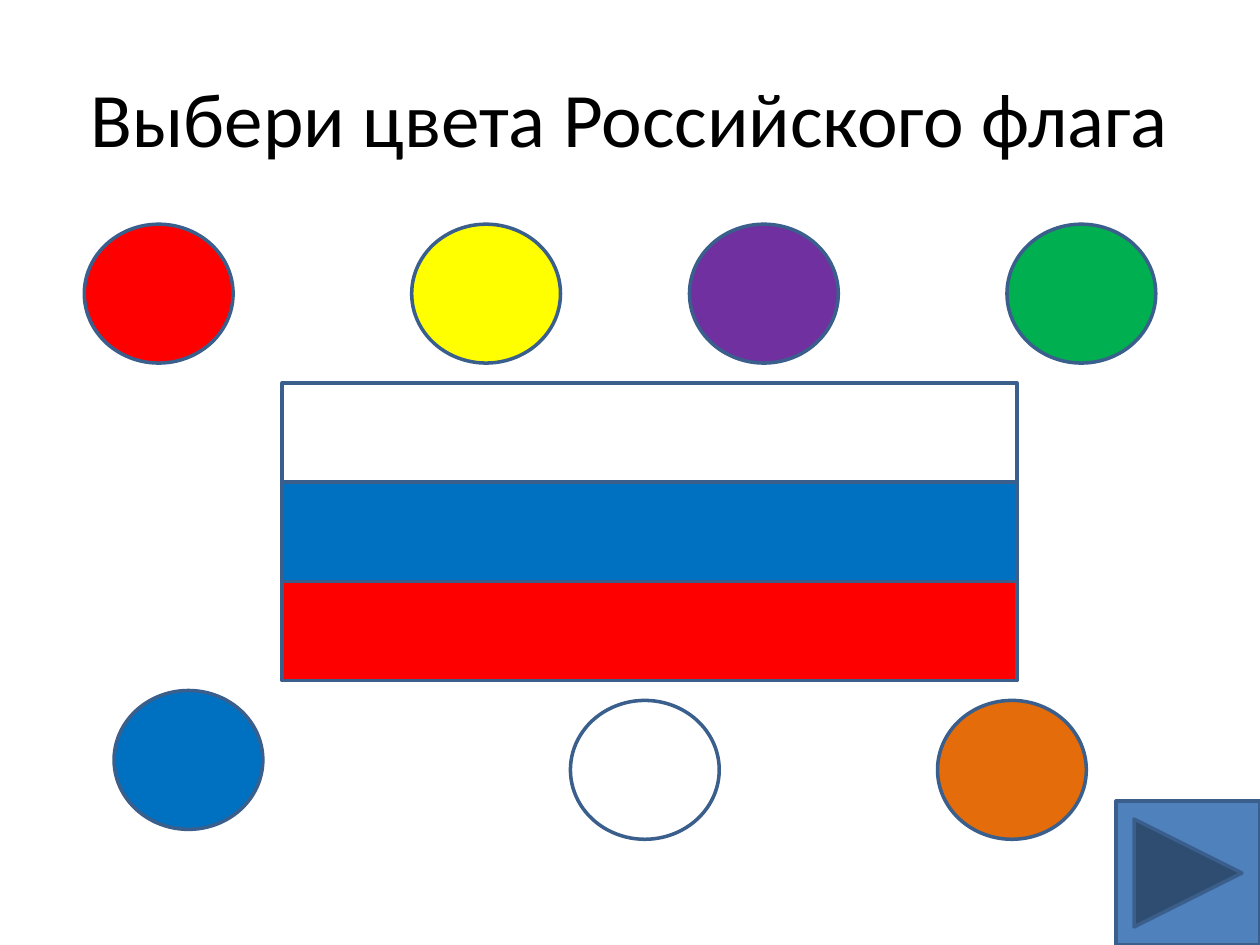
from pptx import Presentation
from pptx.dml.color import RGBColor
from pptx.enum import shapes, text
from pptx.util import Cm, Pt

# Content
TITLE = "Выбери цвета Российского флага"
COLORS = {
    "black": "000000", "white": "FFFFFF", "blue": "0070C0", "red": "FF0000",
    "green": "00B050", "purple": "7030A0", "yellow": "FFFF00",
    "orange": "E46C0A", "button": "4F81BD", "outline": "3A5F8C",
}
FLAG = ["white", "blue", "red"]
# Colour choices: (colour, left, top) in cm
CHOICES = [
    ("green", 20.3, 4.52), ("purple", 13.9, 4.52), ("yellow", 8.3, 4.52),
    ("blue", 2.3, 13.92), ("white", 11.5, 14.12), ("red", 1.7, 4.52),
    ("orange", 18.9, 14.12),
]

# Sizes in cm
SLIDE_W, SLIDE_H = 25.4, 19.05
CHOICE_W, CHOICE_H = 3, 2.8
FLAG_LEFT, FLAG_TOP, FLAG_W, STRIPE_H = 5.69, 7.72, 14.81, 2
BUTTON = 2.9


def rgb(color):
    return RGBColor.from_string(COLORS[color])


def write(frame, wording, size=44, font="Calibri", color="black",
          align=text.PP_ALIGN.CENTER, anchor=text.MSO_ANCHOR.MIDDLE):
    frame.word_wrap = True
    frame.vertical_anchor = anchor
    paragraph = frame.paragraphs[0]
    paragraph.alignment = align
    run = paragraph.add_run()
    run.text = wording
    run.font.size = Pt(size)
    run.font.name = font
    run.font.color.rgb = rgb(color)


def draw(slide, kind, color, left, top, width, height):
    figure = slide.shapes.add_shape(
        kind, Cm(left), Cm(top), Cm(width), Cm(height))
    figure.shadow.inherit = False
    figure.fill.solid()
    figure.fill.fore_color.rgb = rgb(color)
    figure.line.color.rgb = rgb("outline")
    figure.line.width = Pt(2)


def main():
    prs = Presentation()
    prs.slide_width, prs.slide_height = Cm(SLIDE_W), Cm(SLIDE_H)
    slide = prs.slides.add_slide(prs.slide_layouts[5])
    kinds = shapes.MSO_SHAPE

    # Title
    title = slide.shapes.title
    title.left, title.top = Cm(1.27), Cm(0.76)
    title.width, title.height = Cm(22.86), Cm(3.18)
    write(title.text_frame, TITLE)

    # Colours to choose from
    for color, left, top in CHOICES:
        draw(slide, kinds.OVAL, color, left, top, CHOICE_W, CHOICE_H)

    # Flag stripes
    for row, color in enumerate(FLAG):
        draw(slide, kinds.RECTANGLE, color, FLAG_LEFT,
             FLAG_TOP + row * STRIPE_H, FLAG_W, STRIPE_H)

    # Next button in the bottom right corner
    draw(slide, kinds.ACTION_BUTTON_FORWARD_OR_NEXT, "button",
         SLIDE_W - BUTTON, SLIDE_H - BUTTON, BUTTON, BUTTON)

    prs.save("out.pptx")


if __name__ == "__main__":
    main()
